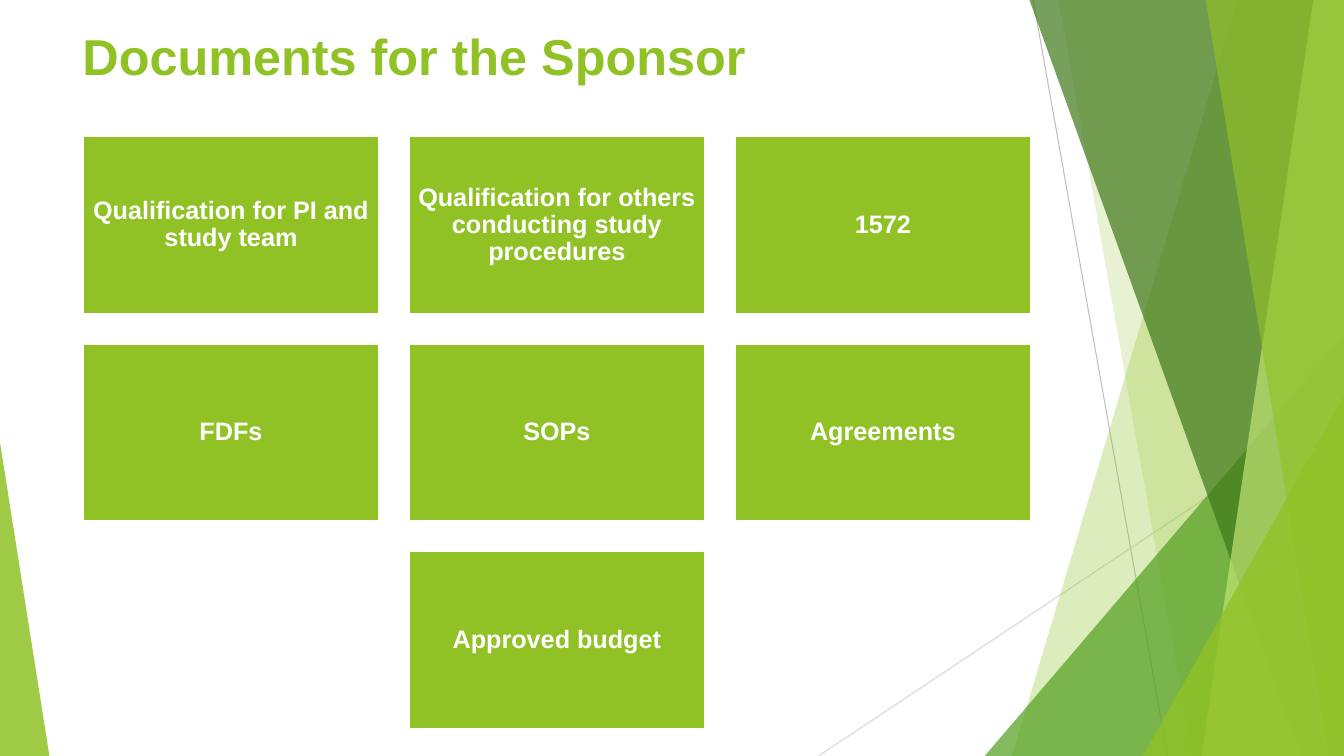
from pptx import Presentation
from pptx.dml.color import RGBColor
from pptx.enum.shapes import MSO_CONNECTOR, MSO_SHAPE
from pptx.enum.text import MSO_ANCHOR, PP_ALIGN
from pptx.oxml.ns import qn
from pptx.util import Pt
from lxml import etree

STRAIGHT = MSO_CONNECTOR.STRAIGHT
RECTANGLE = MSO_SHAPE.RECTANGLE
TRIANGLE = MSO_SHAPE.ISOSCELES_TRIANGLE
TOP, MIDDLE = MSO_ANCHOR.TOP, MSO_ANCHOR.MIDDLE
LEFT, CENTER = PP_ALIGN.LEFT, PP_ALIGN.CENTER

THEME = {
    "font": "Arial",
    "green": "90C226",
    "leaf": "54A021",
    "forest": "3F7819",
    "lime": "C0E474",
    "white": "FFFFFF",
    "grey": "BFBFBF",
    "pale_grey": "D9D9D9",
    "title_size": 36,
    "card_size": 18,
}
WIDTH, HEIGHT = 960, 540


def paint(shape, colour, opacity=100):
    shape.shadow.inherit = False
    shape.fill.solid()
    shape.fill.fore_color.rgb = RGBColor.from_string(THEME[colour])
    shape.line.fill.background()
    if opacity < 100:
        tint = shape.fill._xPr.find(qn("a:solidFill"))[0]
        etree.SubElement(tint, qn("a:alpha"), val=str(opacity * 1000))


def write(shape, text, size, colour, frame_format, align, spacing):
    frame = shape.text_frame
    for name, value in frame_format.items():
        setattr(frame, name, value)
    para = frame.paragraphs[0]
    para.alignment = align
    para.line_spacing = spacing
    span = para.add_run()
    span.text = text
    font_format = {"name": THEME["font"], "size": Pt(THEME[size]), "bold": True}
    for name, value in font_format.items():
        setattr(span.font, name, value)
    span.font.color.rgb = RGBColor.from_string(THEME[colour])


deck = Presentation()
deck.slide_width, deck.slide_height = Pt(WIDTH), Pt(HEIGHT)
page = deck.slides.add_slide(deck.slide_layouts[6])
shapes = page.shapes

rays = [
    ((738, 0, 834, HEIGHT), "grey"),
    ((WIDTH, 290, 584.6, HEIGHT), "pale_grey"),
]
for ends, colour in rays:
    ray = shapes.add_connector(STRAIGHT, *map(Pt, ends))
    ray.line.width = Pt(0.75)
    ray.line.color.rgb = RGBColor.from_string(THEME[colour])
    etree.SubElement(ray._element.spPr, qn("a:effectLst"))

facets = [
    ("band", (884.2, 722.9), "green", 30),
    ("band", (756, 851.8), "green", 20),
    ("triangle", (703.4, 239.8, 256.6, 1), "leaf", 72),
    ("band", (735.1, 929.5), "forest", 70),
    ("band", (938.2, 858.2), "lime", 70),
    ("band", (861.1, 949), "green", 65),
    ("triangle", (816.5, 283, 143.5, 1), "green", 80),
    ("triangle", (0, 316.1, 35.3, 0), "green", 85),
]
for kind, place, colour, opacity in facets:
    if kind == "band":
        top_x, bottom_x = place
        outline = shapes.build_freeform(Pt(top_x), Pt(-0.7))
        corners = [(WIDTH, -0.7), (WIDTH, HEIGHT), (bottom_x, HEIGHT)]
        outline.add_line_segments([(Pt(x), Pt(y)) for x, y in corners])
        facet = outline.convert_to_shape()
    else:
        left, top, width, apex = place
        facet = shapes.add_shape(TRIANGLE, Pt(left), Pt(top), Pt(width), Pt(HEIGHT - top))
        facet.adjustments[0] = apex
    paint(facet, colour, opacity)

title = shapes.add_textbox(Pt(51.8), Pt(14.4), Pt(676.8), Pt(64))
title_frame = {"word_wrap": True, "vertical_anchor": TOP}
write(title, "Documents for the Sponsor", "title_size", "green", title_frame, LEFT, 1)

card_rows = [
    ["Qualification for PI and study team",
     "Qualification for others conducting study procedures",
     "1572"],
    ["FDFs", "SOPs", "Agreements"],
    ["Approved budget"],
]
grid_left, grid_top, card_width, card_height, gap = 59.2, 97.4, 211.6, 127, 21.2
columns = 3
card_frame = {"word_wrap": True, "vertical_anchor": MIDDLE}
for side in ("left", "top", "right", "bottom"):
    card_frame[f"margin_{side}"] = Pt(5)

for row, labels in enumerate(card_rows):
    indent = (columns - len(labels)) / 2
    for column, label in enumerate(labels):
        left = grid_left + (column + indent) * (card_width + gap)
        top = grid_top + row * (card_height + gap)
        card = shapes.add_shape(RECTANGLE, Pt(left), Pt(top), Pt(card_width), Pt(card_height))
        paint(card, "green")
        card.line.color.rgb = RGBColor.from_string(THEME["white"])
        card.line.width = Pt(1.5)
        write(card, label, "card_size", "white", card_frame, CENTER, 0.9)

deck.save("out.pptx")
